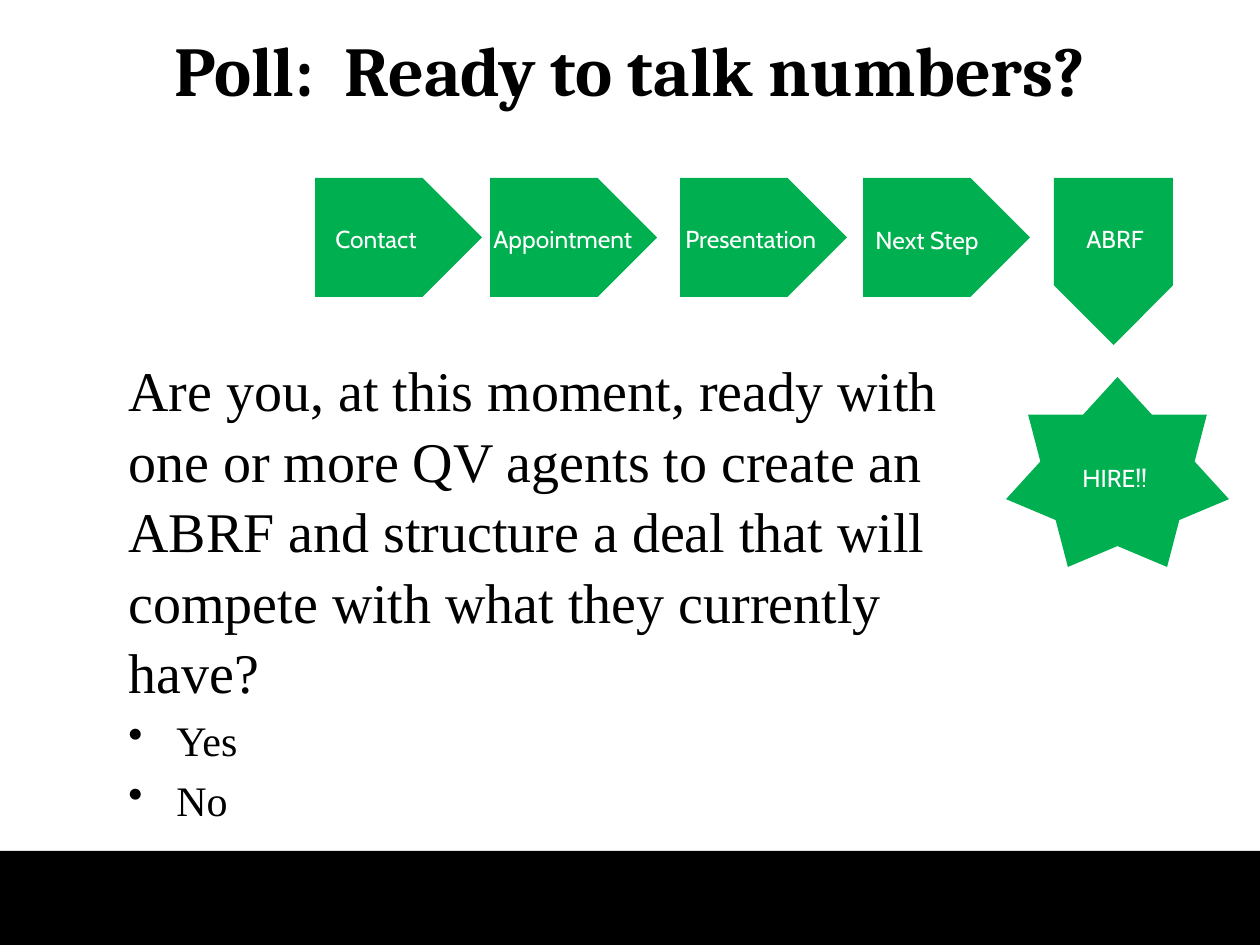
import dataclasses

import pptx
import pptx.dml.color
import pptx.enum.shapes
import pptx.enum.text
import pptx.oxml
import pptx.oxml.ns
import pptx.util

SCALE = 914400 / 126  # EMU per px
SHAPES = pptx.enum.shapes.MSO_SHAPE
ALIGN = pptx.enum.text.PP_ALIGN
ANCHOR = pptx.enum.text.MSO_ANCHOR


@dataclasses.dataclass(frozen=True)
class Theme:
    ink: str = "000000"
    green: str = "00B050"
    light: str = "FFFFFF"
    title_font: str = "Cambria"
    label_font: str = "Cabin"
    body_font: str = "Times New Roman"
    title_size: int = 40
    question_size: int = 32
    answer_size: int = 24
    label_size: int = 14


THEME = Theme()


def px(length):
    return pptx.util.Emu(round(length * SCALE))


def add_filled(slide, kind, box, color, rotation=0):
    shape = slide.shapes.add_shape(kind, *map(px, box))
    shape.shadow.inherit = False
    shape.fill.solid()
    shape.fill.fore_color.rgb = pptx.dml.color.RGBColor.from_string(color)
    shape.line.fill.background()
    shape.rotation = rotation
    return shape


def add_frame(slide, box, anchor=ANCHOR.TOP, wrap=True):
    frame = slide.shapes.add_textbox(*map(px, box)).text_frame
    frame.word_wrap = wrap
    frame.vertical_anchor = anchor
    return frame


def add_bullet(paragraph, indent):
    properties = paragraph._p.get_or_add_pPr()
    properties.set("marL", str(px(indent)))
    properties.set("indent", str(-px(indent)))
    bullet = pptx.oxml.parse_xml(
        f'<a:buChar {pptx.oxml.ns.nsdecls("a")} char="•"/>')
    properties.append(bullet)


def write(frame, text, *, font, size, color, bold=False, align=ALIGN.LEFT,
          bullet_indent=0, space_before=0, line_spacing=None):
    """Fill the first paragraph if it is empty, otherwise add one."""
    paragraph = frame.paragraphs[0]
    if paragraph.runs:
        paragraph = frame.add_paragraph()
    if bullet_indent:
        add_bullet(paragraph, bullet_indent)
    paragraph.alignment = align
    paragraph.space_before = pptx.util.Pt(space_before)
    if line_spacing:
        paragraph.line_spacing = line_spacing
    run = paragraph.add_run()
    run.text = text
    run.font.name = font
    run.font.size = pptx.util.Pt(size)
    run.font.bold = bold
    run.font.color.rgb = pptx.dml.color.RGBColor.from_string(color)


def add_label(slide, text, box):
    frame = add_frame(slide, box, wrap=False)
    write(frame, text, font=THEME.label_font, size=THEME.label_size,
          color=THEME.light)


def build_title(slide, box):
    frame = add_frame(slide, box, anchor=ANCHOR.MIDDLE)
    write(frame, "Poll:  Ready to talk numbers?", font=THEME.title_font,
          size=THEME.title_size, color=THEME.ink, bold=True,
          align=ALIGN.CENTER)


def build_process(slide, box):
    left, top, _, _ = box
    arrow_width, arrow_height, label_height = 167, 119, 43

    # Steps: text, arrow offset, label offset (x, y), label width
    steps = [
        ("Contact", 0, 8, 40, 108),
        ("Appointment", 175, 166, 40, 164),
        ("Presentation", 365, 358, 40, 161),
        ("Next Step", 548, 548, 41, 132),
    ]
    for text, arrow_x, label_x, label_y, label_width in steps:
        add_filled(slide, SHAPES.PENTAGON,
                   (left + arrow_x, top, arrow_width, arrow_height),
                   THEME.green)
        add_label(slide, text,
                  (left + label_x, top + label_y, label_width, label_height))

    # Downward arrow
    add_filled(slide, SHAPES.PENTAGON,
               (left + 715, top + 24, arrow_width, arrow_height),
               THEME.green, rotation=90)
    add_label(slide, "ABRF", (left + 759, top + 40, 83, label_height))

    # Goal star
    add_filled(slide, SHAPES.STAR_7_POINT, (left + 691, top + 199, 223, 190),
               THEME.green)
    add_label(slide, "HIRE!!", (left + 755, top + 279, 97, label_height))


def build_question(slide, box):
    frame = add_frame(slide, box)
    style = {"font": THEME.body_font, "color": THEME.ink}
    write(frame, "Are you, at this moment, ready with one or more QV agents "
          "to create an ABRF and structure a deal that will compete with "
          "what they currently have?", size=THEME.question_size,
          line_spacing=1.05, **style)
    for answer in ("Yes", "No"):
        write(frame, answer, size=THEME.answer_size, bullet_indent=48,
              space_before=5.5, **style)


def build_footer(slide, box):
    add_filled(slide, SHAPES.RECTANGLE, box, THEME.ink)


def main():
    presentation = pptx.Presentation()
    presentation.slide_width = px(1260)
    presentation.slide_height = px(945)
    slide = presentation.slides.add_slide(presentation.slide_layouts[6])
    build_footer(slide, (0, 851, 1260, 94))
    build_title(slide, (63, -10, 1134, 157))
    build_process(slide, (315, 178, 914, 389))
    build_question(slide, (116, 346, 850, 456))
    presentation.save("out.pptx")


if __name__ == "__main__":
    main()
